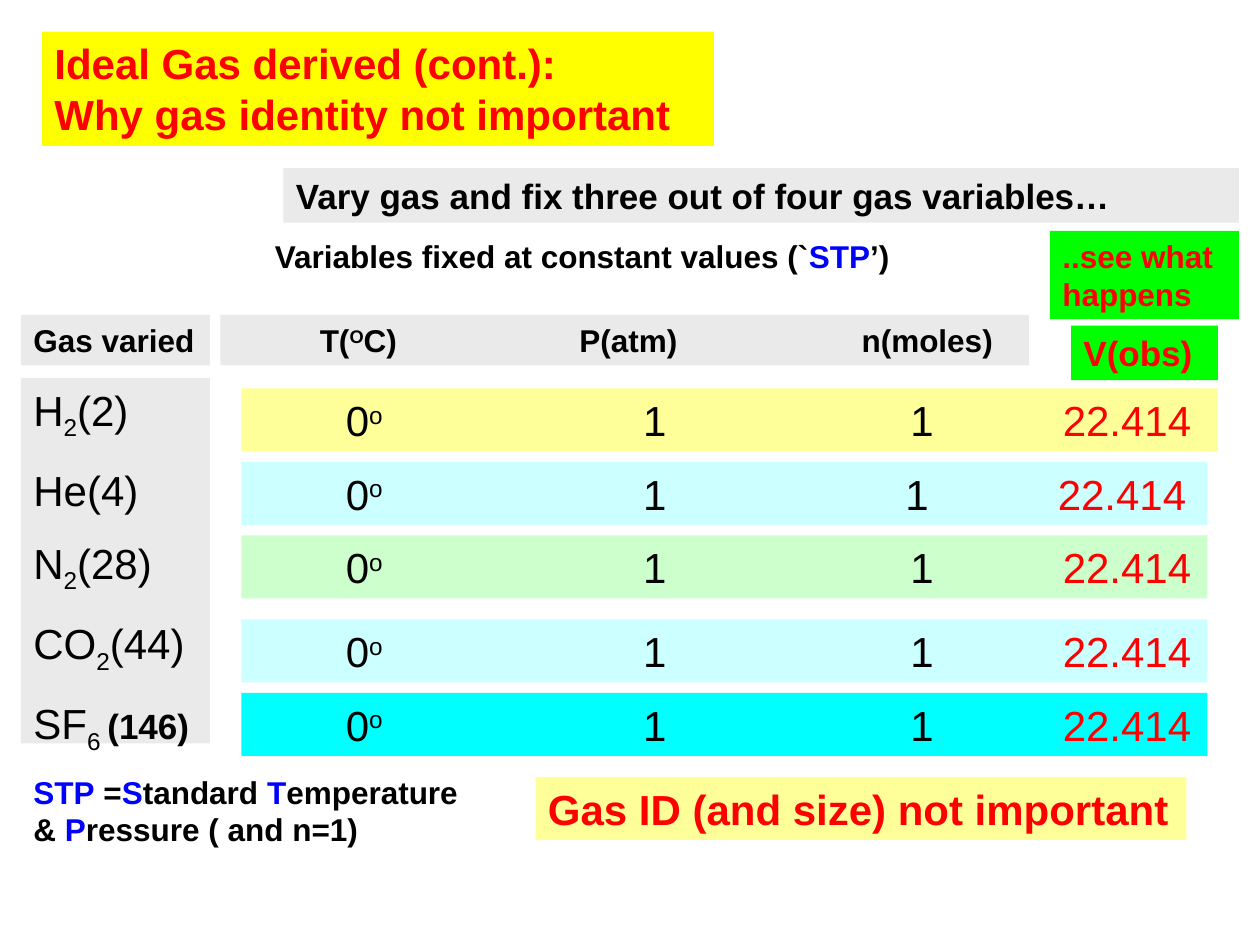
from dataclasses import dataclass
from typing import NamedTuple

from lxml import etree
from pptx import Presentation
from pptx.dml.color import RGBColor
from pptx.enum.shapes import MSO_SHAPE
from pptx.enum.text import MSO_ANCHOR, PP_ALIGN
from pptx.oxml.ns import qn
from pptx.util import Inches, Pt

RECT = MSO_SHAPE.RECTANGLE
TOP = MSO_ANCHOR.TOP
LEFT = PP_ALIGN.LEFT
COLS, ROWS = 120, 90


@dataclass(frozen=True)
class Theme:
    font: str = "Arial"
    small: int = 18
    medium: int = 20
    large: int = 24
    gap: int = 13
    black: str = "000000"
    red: str = "FF0000"
    blue: str = "0000FF"
    gray: str = "EAEAEA"
    yellow: str = "FFFF00"
    cream: str = "FFFF99"
    ice: str = "CCFFFF"
    mint: str = "CCFFCC"
    cyan: str = "00FFFF"
    green: str = "00FF00"


T = Theme()


class Run(NamedTuple):
    text: str
    color: str = ""
    baseline: int = 0
    size: int = 0
    bold: bool = False


class Area(NamedTuple):
    col: float
    row: float
    cols: float
    rows: float


@dataclass(frozen=True)
class Box:
    area: Area
    paragraphs: list[list[Run]]
    size: int
    fill: str = ""
    color: str = T.black
    bold: bool = True
    gap: int = 0
    tabs: tuple[float, ...] = ()


class GasRow(NamedTuple):
    row: int
    cols: int
    fill: str
    shift: float = 0


def add_tabs(p, stops: tuple[float, ...]) -> None:
    tab_list = etree.SubElement(p._p.get_or_add_pPr(), qn("a:tabLst"))
    for stop in stops:
        etree.SubElement(tab_list, qn("a:tab"), pos=str(int(Inches(stop))), algn="l")


def add_run(p, run: Run) -> None:
    r = p.add_run()
    r.text = run.text
    if run.color:
        r.font.color.rgb = RGBColor.from_string(run.color)
    if run.size:
        r.font.size = Pt(run.size)
    if run.bold:
        r.font.bold = True
    if run.baseline:
        r._r.get_or_add_rPr().set("baseline", str(run.baseline * 1000))


def draw_box(s, box: Box, cell_w: float, cell_h: float) -> None:
    a = box.area
    place = [round(v) for v in (a.col * cell_w, a.row * cell_h, a.cols * cell_w, a.rows * cell_h)]
    if box.fill:
        sp = s.shapes.add_shape(RECT, *place)
        sp.shadow.inherit = False
        sp.fill.solid()
        sp.fill.fore_color.rgb = RGBColor.from_string(box.fill)
        sp.line.fill.background()
    else:
        sp = s.shapes.add_textbox(*place)
    tf = sp.text_frame
    tf.word_wrap = True
    tf.vertical_anchor = TOP
    for i, runs in enumerate(box.paragraphs):
        p = tf.add_paragraph() if i else tf.paragraphs[0]
        p.alignment = LEFT
        if i and box.gap:
            p.space_before = Pt(box.gap)
        if box.tabs:
            add_tabs(p, box.tabs)
        p.font.name = T.font
        p.font.size = Pt(box.size)
        p.font.bold = box.bold
        p.font.color.rgb = RGBColor.from_string(box.color)
        for run in runs:
            add_run(p, run)


def gas_row(g: GasRow) -> Box:
    runs = [Run("\t0"), Run("o", baseline=30), Run("\t1\t1\t"), Run("22.414", T.red)]
    tabs = (0.73, 3.09, 5.21 - g.shift, 6.42 - g.shift)
    return Box(Area(23, g.row, g.cols, 6), [runs], T.large, g.fill, bold=False, tabs=tabs)


def gas(name: str, index: str, mass: str) -> list[Run]:
    return [Run(name), Run(index, baseline=-25), Run(mass)]


GAS_ROWS = [
    GasRow(37, 93, T.cream),
    GasRow(44, 92, T.ice, 0.04),
    GasRow(51, 92, T.mint),
    GasRow(59, 92, T.ice),
    GasRow(66, 92, T.cyan),
]

GASES = [
    gas("H", "2", "(2)"),
    [Run("He(4)")],
    gas("N", "2", "(28)"),
    gas("CO", "2", "(44)"),
    [Run("SF"), Run("6 ", baseline=-25), Run("(146)", size=T.medium, bold=True)],
]

STP_NOTE = [
    Run("STP", T.blue), Run(" ="), Run("S", T.blue), Run("tandard "),
    Run("T", T.blue), Run("emperature & "), Run("P", T.blue), Run("ressure ( and n=1)"),
]

BOXES = [
    Box(Area(4, 3, 64, 10.9),
        [[Run("Ideal Gas derived (cont.):")], [Run("Why gas identity not important")]],
        T.large, T.yellow, T.red),
    Box(Area(27, 16, 91, 5.2),
        [[Run("Vary gas and fix three out of four gas variables…")]], T.medium, T.gray),
    Box(Area(25, 22, 70, 4.8),
        [[Run("Variables fixed at constant values (`"), Run("STP", T.blue), Run("’)")]], T.small),
    Box(Area(100, 22, 18, 8.4), [[Run("..see what happens")]], T.small, T.green, T.red),
    Box(Area(2, 30, 18, 4.8), [[Run("Gas varied")]], T.small, T.gray),
    Box(Area(21, 30, 77, 4.8),
        [[Run("\tT("), Run("O", baseline=30), Run("C)\tP(atm)\tn(moles)")]],
        T.small, T.gray, tabs=(0.69, 2.75, 4.99)),
    Box(Area(102, 31, 14, 5.2), [[Run("V(obs)")]], T.medium, T.green, T.red),
    Box(Area(2, 36, 18, 34.8), GASES, T.large, T.gray, bold=False, gap=T.gap),
    *map(gas_row, GAS_ROWS),
    Box(Area(2, 73, 45, 8.4), [STP_NOTE], T.small),
    Box(Area(51, 74, 62, 6), [[Run("Gas ID (and size) not important")]],
        T.large, T.cream, T.red),
]


def main() -> None:
    prs = Presentation()
    prs.slide_width, prs.slide_height = Inches(10), Inches(7.5)
    s = prs.slides.add_slide(prs.slide_layouts[6])
    for box in BOXES:
        draw_box(s, box, prs.slide_width / COLS, prs.slide_height / ROWS)
    prs.save("out.pptx")


if __name__ == "__main__":
    main()
